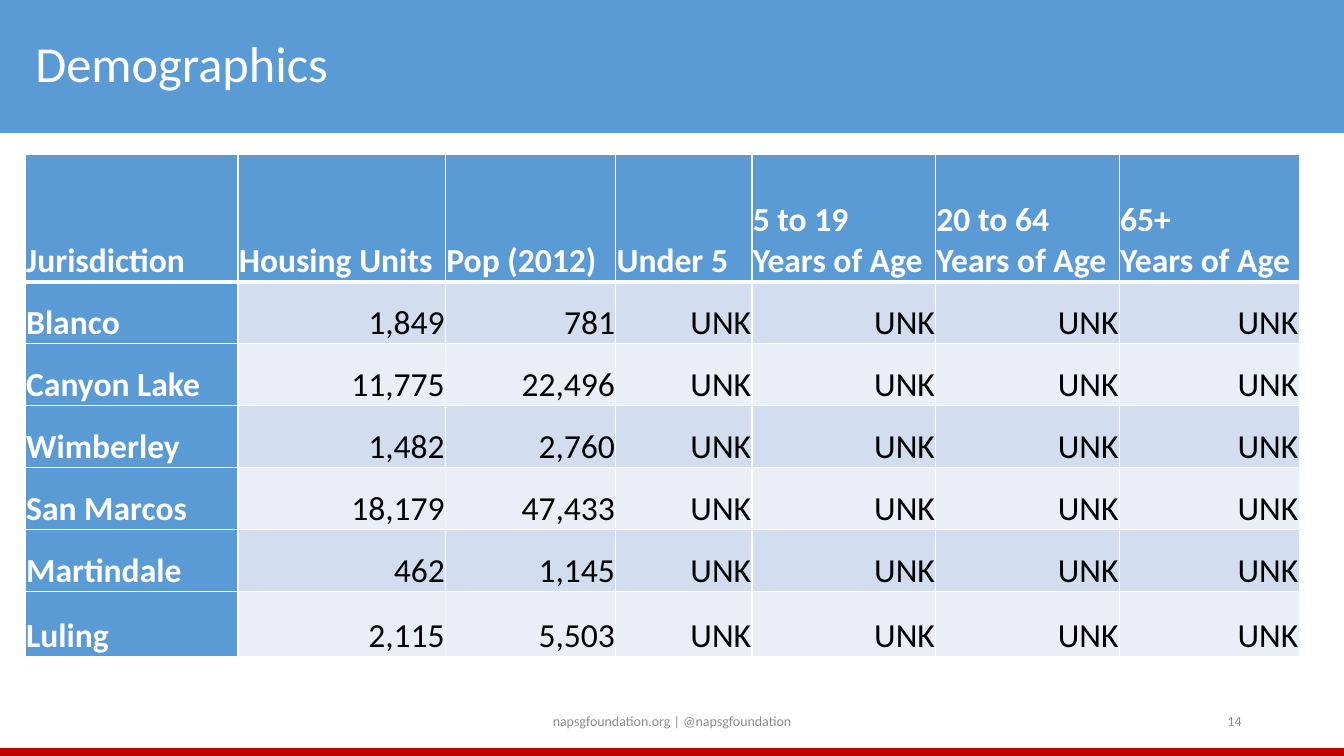
from lxml.etree import SubElement
from pptx import Presentation
from pptx.dml.color import RGBColor
from pptx.enum.shapes import MSO_SHAPE
from pptx.enum.text import MSO_ANCHOR, PP_ALIGN
from pptx.oxml.ns import qn
from pptx.util import Cm, Pt

COLORS = {
    "blue": "5B9BD5",
    "red": "C00000",
    "white": "FFFFFF",
    "black": "000000",
    "grey": "8C8C8C",
    "dark_band": "D2DEEF",
    "light_band": "EAEFF7",
}
FONT = "Calibri"
PAGE_WIDTH, PAGE_HEIGHT = 33.87, 19.05
TITLE_HEIGHT = 3.35
STRIPE_HEIGHT = 0.2

HEADERS = [
    "Jurisdiction", "Housing Units", "Pop (2012)", "Under 5",
    "5 to 19\nYears of Age", "20 to 64\nYears of Age", "65+\nYears of Age",
]
JURISDICTIONS = [
    ("Blanco", "1,849", "781"),
    ("Canyon Lake", "11,775", "22,496"),
    ("Wimberley", "1,482", "2,760"),
    ("San Marcos", "18,179", "47,433"),
    ("Martindale", "462", "1,145"),
    ("Luling", "2,115", "5,503"),
]
AGE_GROUPS = 4
COLUMN_WIDTHS = [5.36, 5.23, 4.29, 3.43, 4.63, 4.63, 4.53]
ROW_HEIGHTS = [3.2] + [1.56] * 5 + [1.65]


def rgb(name):
    return RGBColor.from_string(COLORS[name])


def write(frame, text, size, color, bold=False, align=PP_ALIGN.LEFT, spacing=None):
    para = frame.paragraphs[0]
    para.text = text
    para.alignment = align
    if spacing:
        para.line_spacing = spacing
    for span in para.runs:
        span.font.name = FONT
        span.font.size = Pt(size)
        span.font.bold = bold
        span.font.color.rgb = rgb(color)


def add_band(page, top, height, color):
    """Add a plain bar across the full width of the page."""
    band = page.shapes.add_shape(
        MSO_SHAPE.RECTANGLE, Cm(0), Cm(top), Cm(PAGE_WIDTH), Cm(height))
    band.shadow.inherit = False
    band.fill.solid()
    band.fill.fore_color.rgb = rgb(color)
    band.line.fill.background()


def add_text(page, left, top, width, height, text, **text_format):
    box = page.shapes.add_textbox(Cm(left), Cm(top), Cm(width), Cm(height))
    frame = box.text_frame
    frame.word_wrap = True
    frame.vertical_anchor = MSO_ANCHOR.MIDDLE
    write(frame, text, **text_format)


def set_borders(cell, **widths):
    """Draw white cell borders, with widths in points keyed by L, R, T and B."""
    properties = cell._tc.get_or_add_tcPr()
    for side, width in widths.items():
        line = SubElement(properties, qn(f"a:ln{side}"), w=str(Pt(width)))
        fill = SubElement(line, qn("a:solidFill"))
        SubElement(fill, qn("a:srgbClr"), val=COLORS["white"])


def format_cell(cell, text, row, column):
    is_label = row == 0 or column == 0
    set_borders(cell, L=1, R=1, T=3 if row == 1 else 1, B=3 if row == 0 else 1)
    cell.fill.solid()
    band = "dark_band" if row % 2 else "light_band"
    cell.fill.fore_color.rgb = rgb("blue" if is_label else band)
    cell.margin_left = cell.margin_right = Cm(0.02)
    cell.margin_top = cell.margin_bottom = Cm(0)
    cell.vertical_anchor = MSO_ANCHOR.BOTTOM
    write(cell.text_frame, text, size=24, bold=is_label,
          color="white" if is_label else "black",
          align=PP_ALIGN.LEFT if is_label else PP_ALIGN.RIGHT)


def add_demographics_table(page, left, top):
    rows = [HEADERS] + [[*facts] + ["UNK"] * AGE_GROUPS for facts in JURISDICTIONS]
    table = page.shapes.add_table(
        len(rows), len(HEADERS), Cm(left), Cm(top),
        Cm(sum(COLUMN_WIDTHS)), Cm(sum(ROW_HEIGHTS))).table
    for column, width in zip(table.columns, COLUMN_WIDTHS):
        column.width = Cm(width)
    for row, height in zip(table.rows, ROW_HEIGHTS):
        row.height = Cm(height)
    for row_index, texts in enumerate(rows):
        for column_index, text in enumerate(texts):
            format_cell(table.cell(row_index, column_index), text,
                        row_index, column_index)


def main():
    deck = Presentation()
    deck.slide_width, deck.slide_height = Cm(PAGE_WIDTH), Cm(PAGE_HEIGHT)
    page = deck.slides.add_slide(deck.slide_layouts[6])

    add_band(page, PAGE_HEIGHT - STRIPE_HEIGHT, STRIPE_HEIGHT, "red")
    add_band(page, 0, TITLE_HEIGHT, "blue")
    add_text(page, 0.64, 0, 33.23, TITLE_HEIGHT, "Demographics",
             size=36, color="white", spacing=0.9)
    add_demographics_table(page, 0.64, 3.9)
    add_text(page, 11.22, 17.66, 11.43, 1.01,
             "napsgfoundation.org | @napsgfoundation",
             size=10, color="grey", align=PP_ALIGN.CENTER)
    add_text(page, 23.92, 17.66, 7.62, 1.01, "14",
             size=10, color="grey", align=PP_ALIGN.RIGHT)

    deck.save("out.pptx")


if __name__ == "__main__":
    main()
